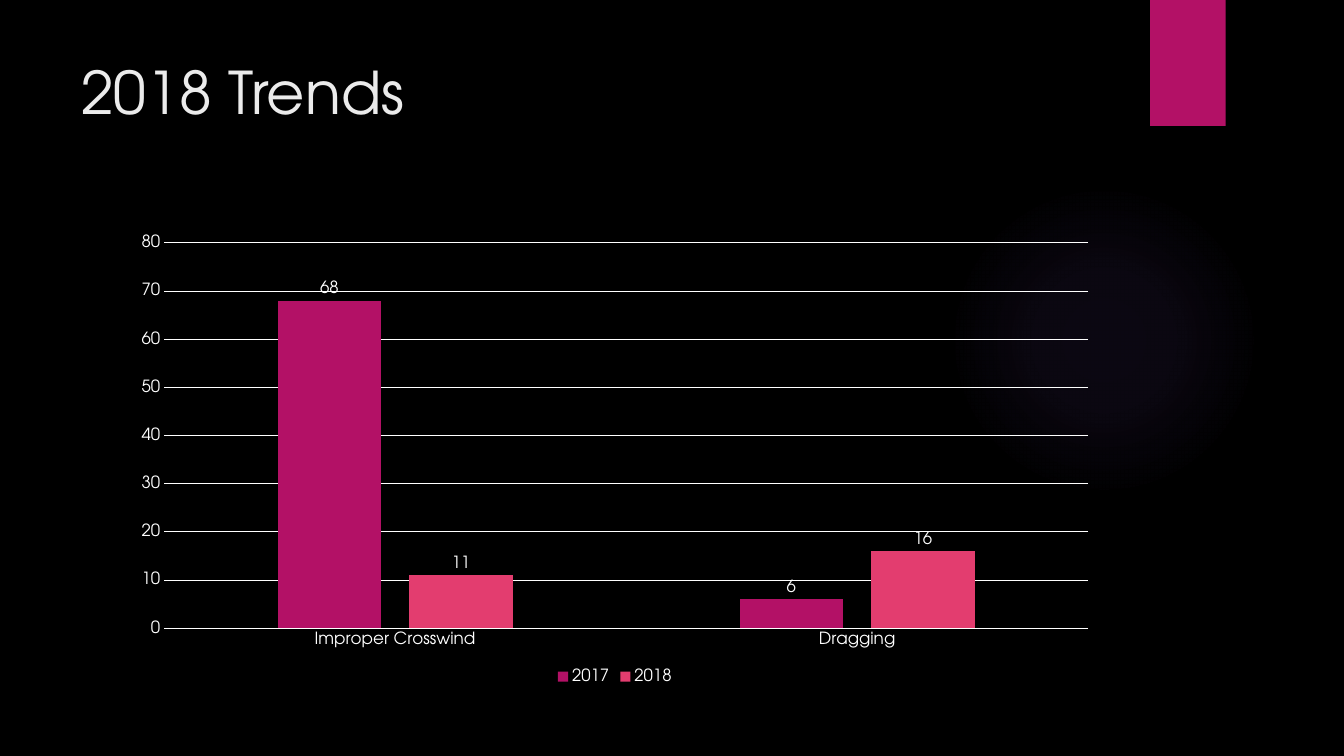
from lxml import etree
from pptx import Presentation
from pptx.chart.data import CategoryChartData
from pptx.dml.color import RGBColor
from pptx.enum.chart import XL_CHART_TYPE, XL_LABEL_POSITION, XL_LEGEND_POSITION, XL_TICK_MARK
from pptx.enum.shapes import MSO_SHAPE
from pptx.enum.text import MSO_ANCHOR, PP_ALIGN
from pptx.oxml import parse_xml
from pptx.oxml.ns import nsdecls, qn
from pptx.util import Pt

COLUMN_CLUSTERED = XL_CHART_TYPE.COLUMN_CLUSTERED
OUTSIDE_END = XL_LABEL_POSITION.OUTSIDE_END
LEGEND_BOTTOM = XL_LEGEND_POSITION.BOTTOM
NO_TICK = XL_TICK_MARK.NONE
OVAL, RECTANGLE = MSO_SHAPE.OVAL, MSO_SHAPE.RECTANGLE
ANCHOR_TOP, ALIGN_LEFT = MSO_ANCHOR.TOP, PP_ALIGN.LEFT

FONT = "TeX Gyre Adventor"
COLORS = {
    "background": "000000",
    "title": "EBEBEB",
    "text": "FFFFFF",
    "magenta": "B31166",
    "pink": "E33D6F",
    "glow": "9B6BF2",
}
GLOW_STOPS = [(0, 7), (36, 6), (69, 0)]
CATEGORIES = ["Improper Crosswind", "Dragging"]
SERIES = [("2017", (68, 6), "magenta"), ("2018", (11, 16), "pink")]


def rgb(name):
    return RGBColor.from_string(COLORS[name])


def style_font(font, size, color):
    font.name = FONT
    font.size = Pt(size)
    font.bold = False
    font.color.rgb = rgb(color)


def style_line(line, color):
    line.color.rgb = rgb(color)
    line.width = Pt(0.75)


def add_plain_shape(slide, kind, box):
    shape = slide.shapes.add_shape(kind, *map(Pt, box))
    shape.line.fill.background()
    shape.shadow.inherit = False
    return shape


def add_glow(slide, box):
    glow = add_plain_shape(slide, OVAL, box)
    stops = "".join(
        f'<a:gs pos="{position * 1000}"><a:srgbClr val="{COLORS["glow"]}">'
        f'<a:alpha val="{opacity * 1000}"/></a:srgbClr></a:gs>'
        for position, opacity in GLOW_STOPS
    )
    gradient = parse_xml(
        f'<a:gradFill {nsdecls("a")} rotWithShape="1"><a:gsLst>{stops}</a:gsLst>'
        '<a:path path="circle"><a:fillToRect l="50000" t="50000" r="50000" b="50000"/>'
        "</a:path></a:gradFill>"
    )
    glow._element.spPr.find(qn("a:prstGeom")).addnext(gradient)


def add_ribbon(slide, box):
    ribbon = add_plain_shape(slide, RECTANGLE, box)
    ribbon.fill.solid()
    ribbon.fill.fore_color.rgb = rgb("magenta")
    effects = ribbon._element.spPr.find(qn("a:effectLst"))
    shadow = etree.SubElement(
        effects, qn("a:outerShdw"),
        blurRad=str(Pt(3)), dist=str(Pt(2)), dir="5400000", rotWithShape="0",
    )
    color = etree.SubElement(shadow, qn("a:srgbClr"), val="000000")
    etree.SubElement(color, qn("a:alpha"), val="45000")


def set_title(slide, box, text):
    title = slide.shapes.title
    title.left, title.top, title.width, title.height = map(Pt, box)
    frame = title.text_frame
    frame.text = text
    frame.word_wrap = True
    frame.vertical_anchor = ANCHOR_TOP
    paragraph = frame.paragraphs[0]
    paragraph.alignment = ALIGN_LEFT
    style_font(paragraph.font, 42, "title")


def style_axes(chart):
    for axis in (chart.category_axis, chart.value_axis):
        axis.major_tick_mark = NO_TICK
        axis.minor_tick_mark = NO_TICK
        style_font(axis.tick_labels.font, 12, "text")
    style_line(chart.category_axis.format.line, "text")
    values = chart.value_axis
    values.minimum_scale, values.maximum_scale, values.major_unit = 0, 80, 10
    values.format.line.fill.background()
    values.has_major_gridlines = True
    style_line(values.major_gridlines.format.line, "text")


def style_series(series, color):
    series.format.fill.solid()
    series.format.fill.fore_color.rgb = rgb(color)
    labels = series.data_labels
    labels.show_value = True
    labels.position = OUTSIDE_END
    style_font(labels.font, 12, "text")


def add_trend_chart(slide, box):
    data = CategoryChartData()
    data.categories = CATEGORIES
    for name, values, color in SERIES:
        data.add_series(name, values)
    chart = slide.shapes.add_chart(COLUMN_CLUSTERED, *map(Pt, box), data).chart
    style_font(chart.font, 10, "text")
    chart.has_title = False
    chart.has_legend = True
    chart.legend.position = LEGEND_BOTTOM
    chart.legend.include_in_layout = False
    style_font(chart.legend.font, 12, "text")
    style_axes(chart)
    plot = chart.plots[0]
    plot.vary_by_categories = False
    plot.gap_width = 219
    plot.overlap = -27
    for series, (name, values, color) in zip(plot.series, SERIES):
        style_series(series, color)


def build_trends_slide(presentation):
    slide = presentation.slides.add_slide(presentation.slide_layouts[5])
    slide.background.fill.solid()
    slide.background.fill.fore_color.rgb = rgb("background")
    add_glow(slide, (677.5, 131.8, 221.8, 221.8))
    add_ribbon(slide, (821.5, 0, 54, 90))
    set_title(slide, (51, 36, 741, 110), "2018 Trends")
    add_trend_chart(slide, (87.1, 161.3, 704.2, 330.5))


def main():
    presentation = Presentation()
    presentation.slide_width, presentation.slide_height = Pt(960), Pt(540)
    build_trends_slide(presentation)
    presentation.save("out.pptx")


if __name__ == "__main__":
    main()
